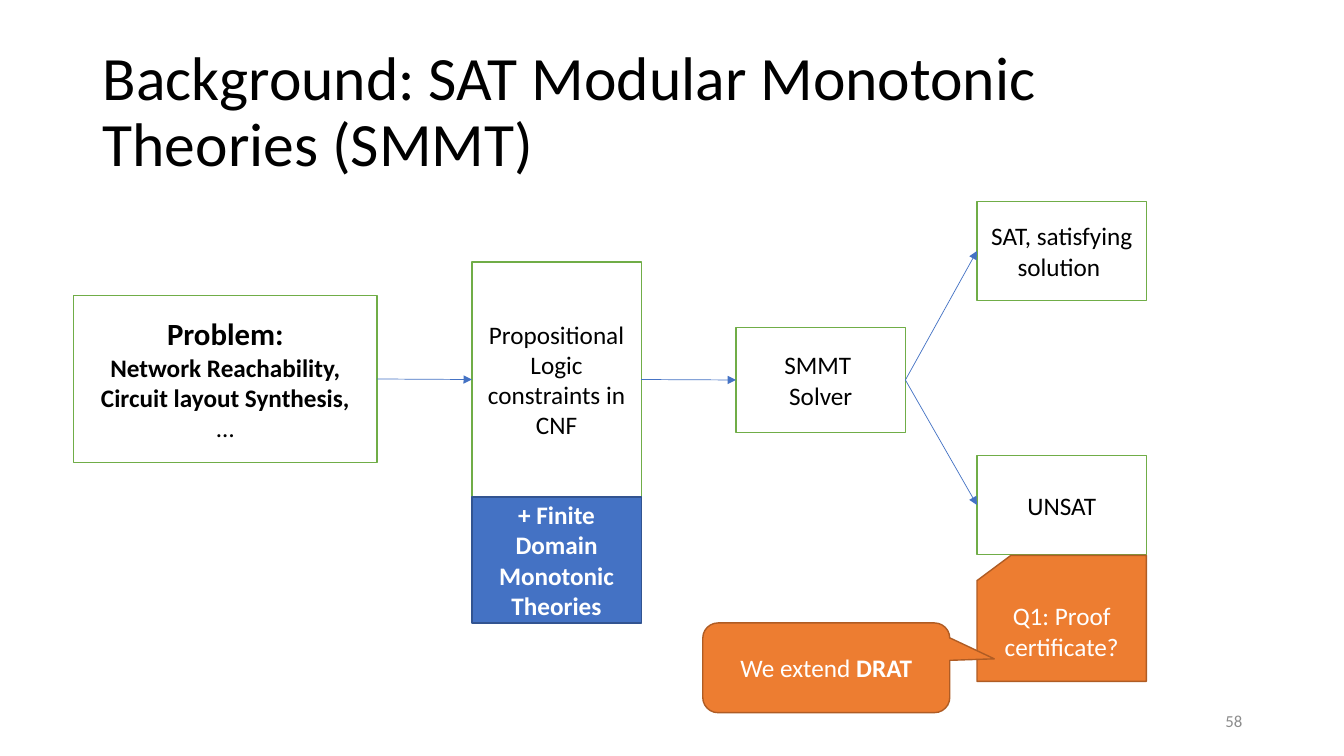
import pptx
import pptx.dml.color
import pptx.enum.shapes
import pptx.enum.text
import pptx.oxml
import pptx.oxml.ns
import pptx.util

Inches, Pt = pptx.util.Inches, pptx.util.Pt
RGB = pptx.dml.color.RGBColor.from_string
SHAPE = pptx.enum.shapes.MSO_SHAPE
ALIGN = pptx.enum.text.PP_ALIGN
MIDDLE = pptx.enum.text.MSO_ANCHOR.MIDDLE

THEME = {
    "font": "Calibri",
    "black": "000000", "white": "FFFFFF", "grey": "8C8C8C", "arrow": "4472C4",
    # fill, outline, text
    "step": ("FFFFFF", "70AD47", "000000"),
    "theory": ("4472C4", "325491", "FFFFFF"),
    "question": ("ED7D31", "AF5C24", "FFFFFF"),
    "title": 44, "heading": 22, "body": 18, "number": 12,
}


def write(shape, paragraphs, color, align):
    """Fill a shape with paragraphs, each a list of (text, size, bold) runs."""
    frame = shape.text_frame
    frame.word_wrap = True
    frame.vertical_anchor = MIDDLE
    for index, runs in enumerate(paragraphs):
        paragraph = frame.add_paragraph() if index else frame.paragraphs[0]
        paragraph.alignment = align
        for text, size, bold in runs:
            run = paragraph.add_run()
            run.text = text
            run.font.color.rgb = RGB(color)
            format_values = {"name": THEME["font"], "size": Pt(size), "bold": bold}
            for name, value in format_values.items():
                setattr(run.font, name, value)


def add_box(kind, style, place, paragraphs):
    fill, outline, color = THEME[style]
    box = slide.shapes.add_shape(kind, *map(Inches, place))
    box.shadow.inherit = False
    box.fill.solid()
    box.fill.fore_color.rgb = RGB(fill)
    box.line.color.rgb = RGB(outline)
    box.line.width = Pt(1)
    write(box, paragraphs, color, ALIGN.CENTER)
    return box


deck = pptx.Presentation()
deck.slide_width, deck.slide_height = Inches(13.33), Inches(7.5)
slide = deck.slides.add_slide(deck.slide_layouts[6])

title = slide.shapes.add_textbox(Inches(0.92), Inches(0.4), Inches(11.5), Inches(1.45))
write(title, [[("Background: SAT Modular Monotonic Theories (SMMT)", THEME["title"], False)]],
      THEME["black"], ALIGN.LEFT)
title.text_frame.paragraphs[0].line_spacing = 0.9

# Steps of the solving flow
BODY = THEME["body"]
STEP_WIDTH = 1.68
CNF_LEFT, SOLVER_LEFT, RESULT_LEFT = 4.68, 7.3, 9.69

problem = add_box(SHAPE.RECTANGLE, "step", (0.73, 2.93, 3.01, 1.66), [
    [("Problem:", THEME["heading"], True)],
    [("Network Reachability,", BODY, True)],
    [("Circuit layout Synthesis,", BODY, True)],
    [("…", BODY, False)],
])
cnf = add_box(SHAPE.RECTANGLE, "step", (CNF_LEFT, 2.6, STEP_WIDTH, 2.33),
              [[("Propositional Logic constraints in CNF", BODY, False)]])
sat = add_box(SHAPE.RECTANGLE, "step", (RESULT_LEFT, 2, STEP_WIDTH, 0.98),
              [[("SAT, satisfying solution ", BODY, False)]])
solver = add_box(SHAPE.RECTANGLE, "step", (SOLVER_LEFT, 3.25, STEP_WIDTH, 1.04),
                 [[("SMMT ", BODY, False)], [("Solver", BODY, False)]])
unsat = add_box(SHAPE.RECTANGLE, "step", (RESULT_LEFT, 4.52, STEP_WIDTH, 0.98),
                [[("UNSAT", BODY, False)]])

# Arrows from the right side of one step to the left side of the next
LEFT_SITE, RIGHT_SITE = 1, 3
for source, target in [(problem, cnf), (cnf, solver), (solver, sat), (solver, unsat)]:
    arrow = slide.shapes.add_connector(pptx.enum.shapes.MSO_CONNECTOR.STRAIGHT, 0, 0, 0, 0)
    arrow.begin_connect(source, RIGHT_SITE)
    arrow.end_connect(target, LEFT_SITE)
    arrow.line.color.rgb = RGB(THEME["arrow"])
    arrow.line.width = Pt(0.5)
    head = pptx.oxml.parse_xml(
        f'<a:tailEnd {pptx.oxml.ns.nsdecls("a")} type="triangle"/>')
    arrow.line._get_or_add_ln().append(head)
    arrow._element.spPr.append(
        pptx.oxml.parse_xml(f'<a:effectLst {pptx.oxml.ns.nsdecls("a")}/>'))

# Additions below the flow
add_box(SHAPE.RECTANGLE, "theory", (CNF_LEFT, 4.93, STEP_WIDTH, 1.25),
        [[("+ Finite Domain Monotonic Theories", BODY, True)]])

slide_number = slide.shapes.add_textbox(Inches(9.42), Inches(6.95), Inches(3), Inches(0.4))
write(slide_number, [[("58", THEME["number"], False)]], THEME["grey"], ALIGN.RIGHT)

add_box(SHAPE.FLOWCHART_CARD, "question", (RESULT_LEFT, 5.51, STEP_WIDTH, 1.25),
        [[("Q1: Proof certificate?", BODY, False)]])
answer = add_box(SHAPE.ROUNDED_RECTANGULAR_CALLOUT, "question", (6.97, 6.18, 2.45, 0.89),
                 [[("We extend ", BODY, False), ("DRAT", BODY, True)]])
for index, value in enumerate((0.68, -0.1, 0.17)):
    answer.adjustments[index] = value

deck.save("out.pptx")
